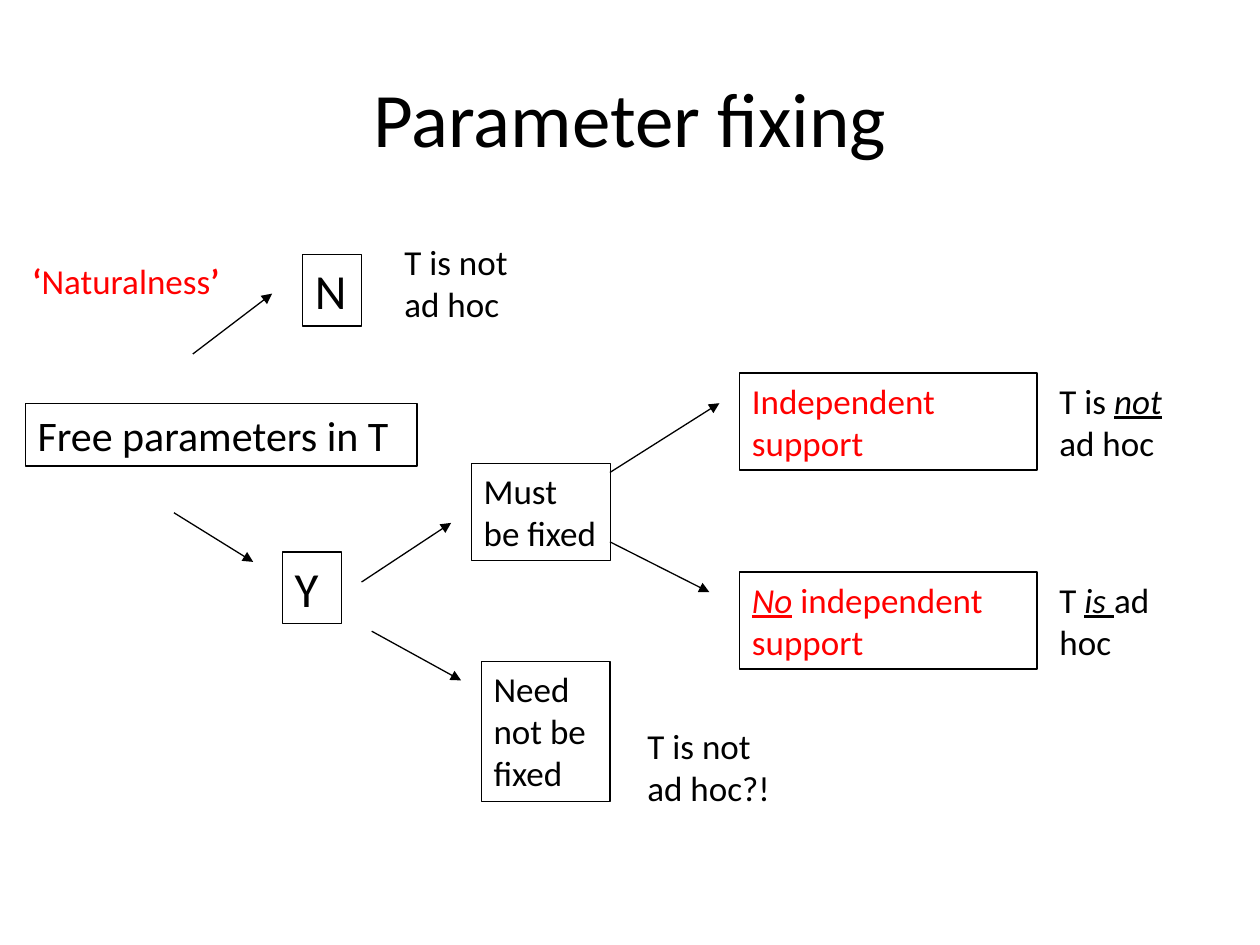
from lxml import etree
from pptx import Presentation
from pptx import util as u
from pptx.dml.color import RGBColor
from pptx.enum import shapes, text
from pptx.oxml.ns import qn

COLORS = {"ink": "000000", "accent": "FF0000"}


class DecisionTree:
    """Holds the style and the slide that the tree is drawn on."""

    font = "Calibri"
    line_width = 0.75

    def __init__(self, slide):
        self.slide = slide

    def color(self, name):
        return RGBColor.from_string(COLORS[name])

    def style(self, paragraph, size, color):
        paragraph.font.name = self.font
        paragraph.font.size = u.Pt(size)
        paragraph.font.color.rgb = self.color(color)

    def title(self, words, *place):
        title = self.slide.shapes.title
        title.left, title.top, title.width, title.height = map(u.Pt, place)
        frame = title.text_frame
        frame.text = words
        frame.vertical_anchor = text.MSO_ANCHOR.MIDDLE
        paragraph = frame.paragraphs[0]
        paragraph.alignment = text.PP_ALIGN.CENTER
        self.style(paragraph, 44, "ink")

    def label(self, runs, left, top, width, height, size=20, color="ink"):
        """Text with runs of (words, marks), where marks are from b, i and u."""
        shape = self.slide.shapes.add_textbox(*map(u.Pt, (left, top, width, height)))
        frame = shape.text_frame
        frame.word_wrap = True
        paragraph = frame.paragraphs[0]
        self.style(paragraph, size, color)
        for words, marks in runs:
            run = paragraph.add_run()
            run.text = words
            if "b" in marks:
                run.font.bold = True
            if "i" in marks:
                run.font.italic = True
            if "u" in marks:
                run.font.underline = True
        return shape

    def box(self, runs, left, top, width, height, size=20, color="ink"):
        shape = self.label(runs, left, top, width, height, size, color)
        shape.line.color.rgb = self.color("ink")
        shape.line.width = u.Pt(self.line_width)

    def arrow(self, *ends):
        connector = self.slide.shapes.add_connector(
            shapes.MSO_CONNECTOR.STRAIGHT, *map(u.Pt, ends))
        connector.line.color.rgb = self.color("ink")
        connector.line.width = u.Pt(self.line_width)
        line = connector.line._get_or_add_ln()
        etree.SubElement(line, qn("a:tailEnd"), type="triangle")
        etree.SubElement(connector._element.spPr, qn("a:effectLst"))


def main():
    presentation = Presentation()
    presentation.slide_width, presentation.slide_height = u.Pt(720), u.Pt(540)
    slide = presentation.slides.add_slide(presentation.slide_layouts[5])
    tree = DecisionTree(slide)
    tree.title("Parameter fixing", 36, 21.6, 648, 90)

    two_lines = 55.44
    upper, lower = 213.12, 326.88  # tops of the two support rows

    # Root and first branch
    tree.box([("Free parameters in T", "")], 14.4, 230.4, 224, 36, size=24)
    tree.box([("Y", "")], 161.3, 315.4, 33.8, 41, size=28)
    tree.box([("N", "")], 172.8, 145.4, 33.8, 41, size=28)

    # Second branch
    tree.box([("Must be fixed", "")], 269.3, 265, 79.4, two_lines)
    tree.box([("Need not be fixed", "")], 275, 378, 73.6, 79.9)

    # Third branch, each row with its verdict
    support_rows = [
        (upper, [("Independent support", "")],
         [("T is ", ""), ("not", "iu"), (" ad hoc", "")]),
        (lower, [("No", "iu"), (" independent support", "")],
         [("T ", ""), ("is ", "iu"), ("ad hoc", "")]),
    ]
    for top, support, verdict in support_rows:
        tree.box(support, 422.6, top, 170, two_lines, color="accent")
        tree.label(verdict, 598.3, top, 79.2, two_lines)

    # Other verdicts and the remark
    tree.label([("T is not ad hoc", "")], 224, 133.9, 79.2, two_lines)
    tree.label([("T is not ad hoc?!", "")], 362.9, 410.4, 96.5, two_lines)
    tree.label([("‘", "b"), ("Naturalness", ""), ("’", "b")],
               11.5, 144.7, 136, 31.7, color="accent")

    # Arrows
    for ends in [
        (110.2, 202.3, 155.5, 167.8),
        (99.4, 293, 144.7, 321.1),
        (206.6, 332.6, 257.8, 298.8),
        (212.4, 360.7, 263.5, 388.8),
        (348.5, 270, 411.1, 230.4),
        (348.5, 309.6, 405.4, 338.4),
    ]:
        tree.arrow(*ends)

    presentation.save("out.pptx")


if __name__ == "__main__":
    main()
